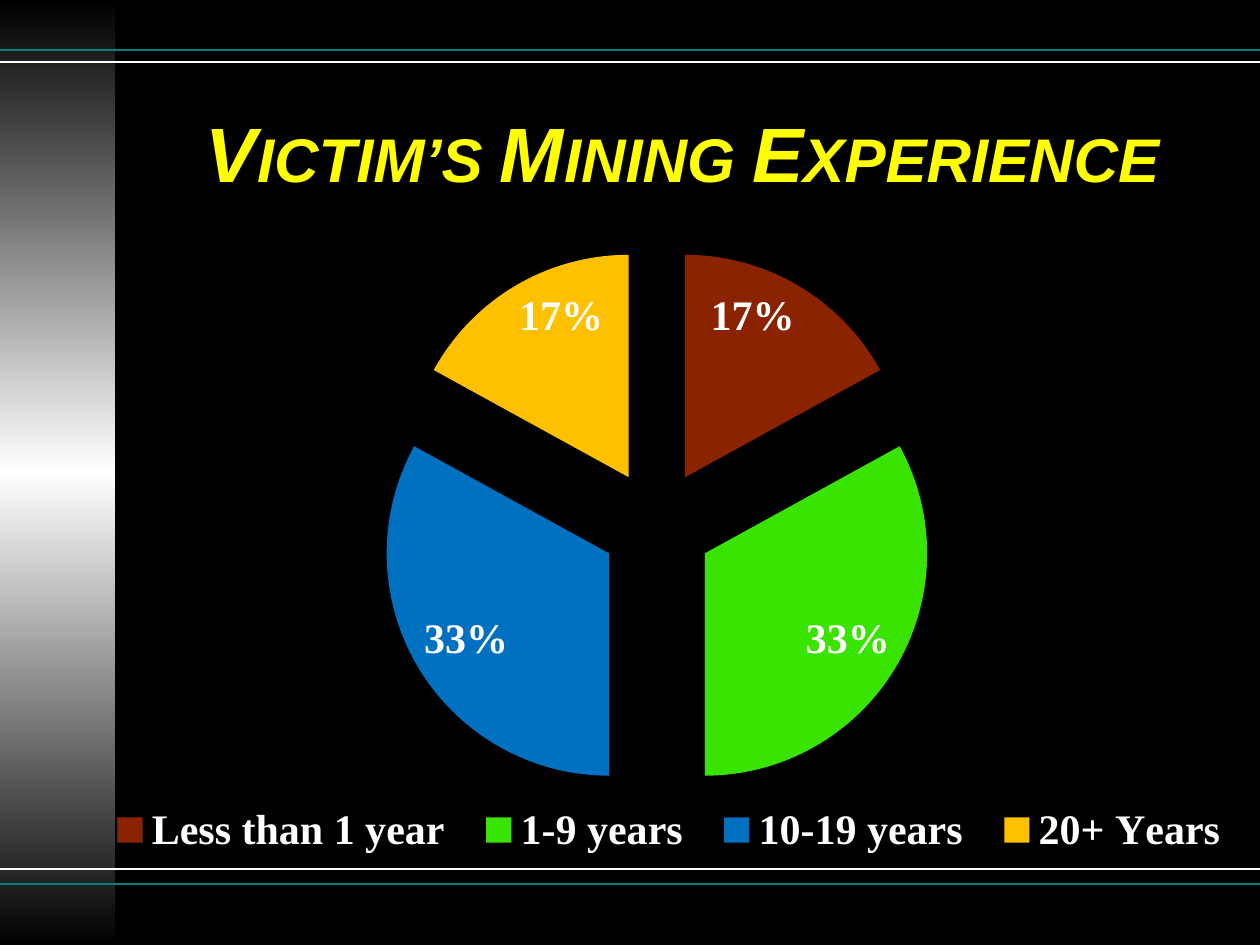
from copy import deepcopy

from lxml import etree
from pptx import Presentation
from pptx.chart.data import CategoryChartData
from pptx.dml.color import RGBColor
from pptx.enum.chart import XL_CHART_TYPE, XL_LABEL_POSITION, XL_LEGEND_POSITION
from pptx.enum.shapes import MSO_CONNECTOR, MSO_SHAPE
from pptx.enum.text import MSO_ANCHOR, PP_ALIGN
from pptx.oxml.ns import qn
from pptx.util import Emu, Pt

PX_PER_INCH = 126
WIDTH, HEIGHT = 1260, 945

BLACK = RGBColor(0x00, 0x00, 0x00)
WHITE = RGBColor(0xFF, 0xFF, 0xFF)
TEAL = RGBColor(0x00, 0x80, 0x80)
YELLOW = RGBColor(0xFF, 0xFF, 0x00)
BROWN = RGBColor(0x8B, 0x22, 0x00)
GREEN = RGBColor(0x39, 0xE5, 0x00)
BLUE = RGBColor(0x00, 0x70, 0xC0)
AMBER = RGBColor(0xFF, 0xC0, 0x00)

RULES = [(50, TEAL), (62, WHITE), (869, WHITE), (884, TEAL)]
EXPERIENCE = [
    ("Less than 1 year", 17, BROWN),
    ("1-9 years", 33, GREEN),
    ("10-19 years", 33, BLUE),
    ("20+ Years", 17, AMBER),
]


def px(length):
    return Emu(round(length * 914400 / PX_PER_INCH))


def box(*lengths):
    return [px(length) for length in lengths]


def add_side_band(slide):
    band = slide.shapes.add_shape(MSO_SHAPE.RECTANGLE, *box(0, 0, 115, HEIGHT))
    band.shadow.inherit = False
    band.line.fill.background()
    band.fill.gradient()
    band.fill.gradient_angle = 270
    stop_list = band._element.spPr.find(".//" + qn("a:gsLst"))
    stop_list.append(deepcopy(stop_list[0]))
    stops = zip(band.fill.gradient_stops, (0, 0.5, 1), (BLACK, WHITE, BLACK))
    for stop, position, color in stops:
        stop.position = position
        stop.color.rgb = color


def add_rule(slide, y, color):
    rule = slide.shapes.add_connector(
        MSO_CONNECTOR.STRAIGHT, *box(0, y, WIDTH, y))
    rule.line.color.rgb = color
    rule.line.width = Pt(1)
    etree.SubElement(rule._element.spPr, qn("a:effectLst"))


def add_title(slide, text):
    frame = slide.shapes.add_textbox(*box(147, 73, 1071, 158)).text_frame
    frame.word_wrap = True
    frame.vertical_anchor = MSO_ANCHOR.MIDDLE
    frame.text = text
    paragraph = frame.paragraphs[0]
    paragraph.alignment = PP_ALIGN.CENTER
    run = paragraph.runs[0]
    font = run.font
    font.name, font.size, font.bold, font.italic = "Arial", Pt(44), True, True
    font.color.rgb = YELLOW
    run._r.get_or_add_rPr().set("cap", "small")


def set_font(font, size, bold=True):
    font.name, font.size, font.bold = "Times New Roman", Pt(size), bold
    font.color.rgb = WHITE


def manual_layout(x, y, width, height, inner=False):
    """Return a c:layout whose values are fractions of the chart area."""
    layout = etree.Element(qn("c:layout"))
    manual = etree.SubElement(layout, qn("c:manualLayout"))
    settings = [("layoutTarget", "inner")] if inner else []
    settings += [("xMode", "edge"), ("yMode", "edge"),
                 ("x", x), ("y", y), ("w", width), ("h", height)]
    for name, value in settings:
        etree.SubElement(manual, qn("c:" + name)).set("val", str(value))
    return layout


def replace_layout(parent, layout, index):
    for old in parent.findall(qn("c:layout")):
        parent.remove(old)
    parent.insert(index, layout)


def add_experience_pie(slide):
    data = CategoryChartData()
    data.categories = [name for name, _, _ in EXPERIENCE]
    data.add_series("Series 1", [share for _, share, _ in EXPERIENCE])
    chart = slide.shapes.add_chart(
        XL_CHART_TYPE.PIE, *box(66, 227, 1194, 670), data).chart
    chart.has_title = False
    set_font(chart.font, 18, bold=False)

    plot = chart.plots[0]
    plot.vary_by_categories = True
    series = plot.series[0]
    for index, (_, _, color) in enumerate(EXPERIENCE):
        fill = series.points[index].format.fill
        fill.solid()
        fill.fore_color.rgb = color
    explosion = etree.Element(qn("c:explosion"))
    explosion.set("val", "25")
    series._element.find(qn("c:dPt")).addprevious(explosion)

    labels = series.data_labels
    labels.show_percentage = True
    labels.show_value = False
    labels.number_format = "0%"
    labels.number_format_is_linked = False
    labels.position = XL_LABEL_POSITION.INSIDE_END
    set_font(labels.font, 24)

    chart.has_legend = True
    legend = chart.legend
    legend.position = XL_LEGEND_POSITION.TOP
    legend.include_in_layout = False
    set_font(legend.font, 24)
    replace_layout(legend._element, manual_layout(0.02, 0.86, 0.97, 0.08), 1)
    plot_area = chart._chartSpace.chart.plotArea
    replace_layout(plot_area, manual_layout(0.02, 0.03, 0.95, 0.83, True), 0)


def main():
    presentation = Presentation()
    presentation.slide_width, presentation.slide_height = box(WIDTH, HEIGHT)
    slide = presentation.slides.add_slide(presentation.slide_layouts[6])
    slide.background.fill.solid()
    slide.background.fill.fore_color.rgb = BLACK
    add_side_band(slide)
    for y, color in RULES:
        add_rule(slide, y, color)
    add_title(slide, "Victim’s Mining Experience")
    add_experience_pie(slide)
    presentation.save("out.pptx")


if __name__ == "__main__":
    main()
